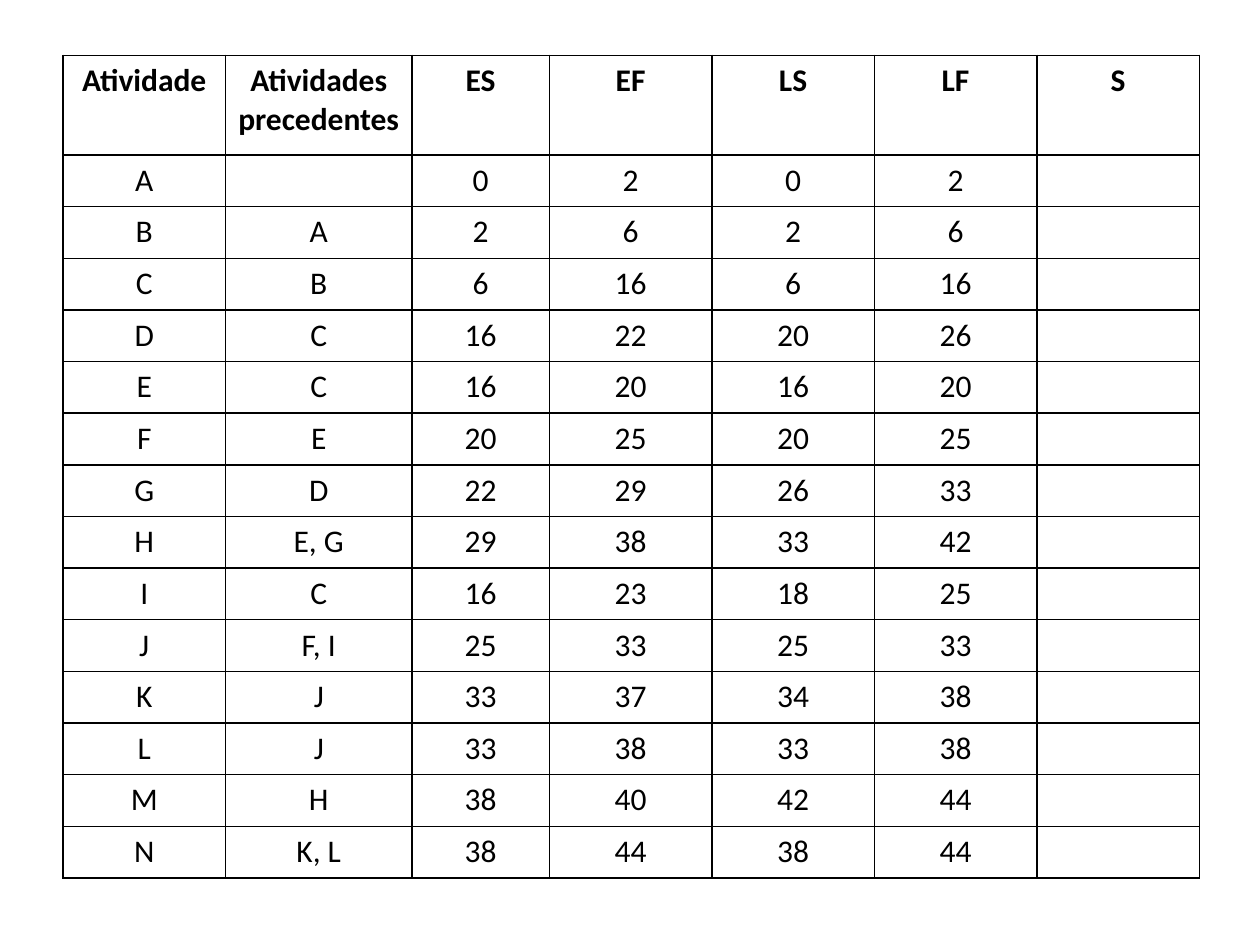
import pptx
import pptx.util
import pptx.dml.color
import pptx.enum.text
import pptx.oxml
import pptx.oxml.ns
import lxml.etree

Inches = pptx.util.Inches
Pt = pptx.util.Pt
RGBColor = pptx.dml.color.RGBColor
BLACK = RGBColor(0, 0, 0)

HEAD = ["Atividade", "Atividades precedentes", "ES", "EF", "LS", "LF", "S"]
TASKS = [
    ("A", "", 0, 2, 0, 2),
    ("B", "A", 2, 6, 2, 6),
    ("C", "B", 6, 16, 6, 16),
    ("D", "C", 16, 22, 20, 26),
    ("E", "C", 16, 20, 16, 20),
    ("F", "E", 20, 25, 20, 25),
    ("G", "D", 22, 29, 26, 33),
    ("H", "E, G", 29, 38, 33, 42),
    ("I", "C", 16, 23, 18, 25),
    ("J", "F, I", 25, 33, 25, 33),
    ("K", "J", 33, 37, 34, 38),
    ("L", "J", 33, 38, 33, 38),
    ("M", "H", 38, 40, 42, 44),
    ("N", "K, L", 38, 44, 38, 44),
]
WIDTHS = [1.29, 1.48, 1.09] + [1.29] * 4
HEIGHTS = [0.79] + [0.41] * len(TASKS)


class Sheet:
    def __init__(self, slide, font="Calibri", size=18, color=BLACK, line=1):
        self.slide = slide
        self.font = font
        self.size = size
        self.color = color
        self.line = line

    def border(self, cell):
        props = cell._tc.get_or_add_tcPr()
        for spot, side in enumerate(("lnL", "lnR", "lnT", "lnB")):
            edge = pptx.oxml.parse_xml(
                f'<a:{side} {pptx.oxml.ns.nsdecls("a")} w="{Pt(self.line)}">'
                f'<a:solidFill><a:srgbClr val="{self.color}"/></a:solidFill>'
                f'</a:{side}>'
            )
            props.insert(spot, edge)

    def cell(self, cell, text, bold):
        cell.text = text
        cell.fill.background()
        cell.margin_left = cell.margin_right = Inches(0.09)
        self.border(cell)
        para = cell.text_frame.paragraphs[0]
        para.alignment = pptx.enum.text.PP_ALIGN.CENTER
        para.font.name = self.font
        para.font.size = Pt(self.size)
        para.font.bold = bold
        para.font.color.rgb = self.color

    def table(self, left, top, widths, heights, rows):
        frame = self.slide.shapes.add_table(
            len(rows), len(widths), Inches(left), Inches(top),
            Inches(sum(widths)), Inches(sum(heights)),
        )
        table = frame.table
        table.horz_banding = False
        for col, width in zip(table.columns, widths):
            col.width = Inches(width)
        for row, height in zip(table.rows, heights):
            row.height = Inches(height)
        for i, row in enumerate(rows):
            for j, value in enumerate(row):
                self.cell(table.cell(i, j), str(value), i == 0)


def main():
    deck = pptx.Presentation()
    deck.slide_width = Inches(10)
    deck.slide_height = Inches(7.5)
    sheet = Sheet(deck.slides.add_slide(deck.slide_layouts[6]))
    rows = [HEAD] + [[*task, ""] for task in TASKS]
    sheet.table(0.5, 0.44, WIDTHS, HEIGHTS, rows)
    deck.save("out.pptx")


if __name__ == "__main__":
    main()
